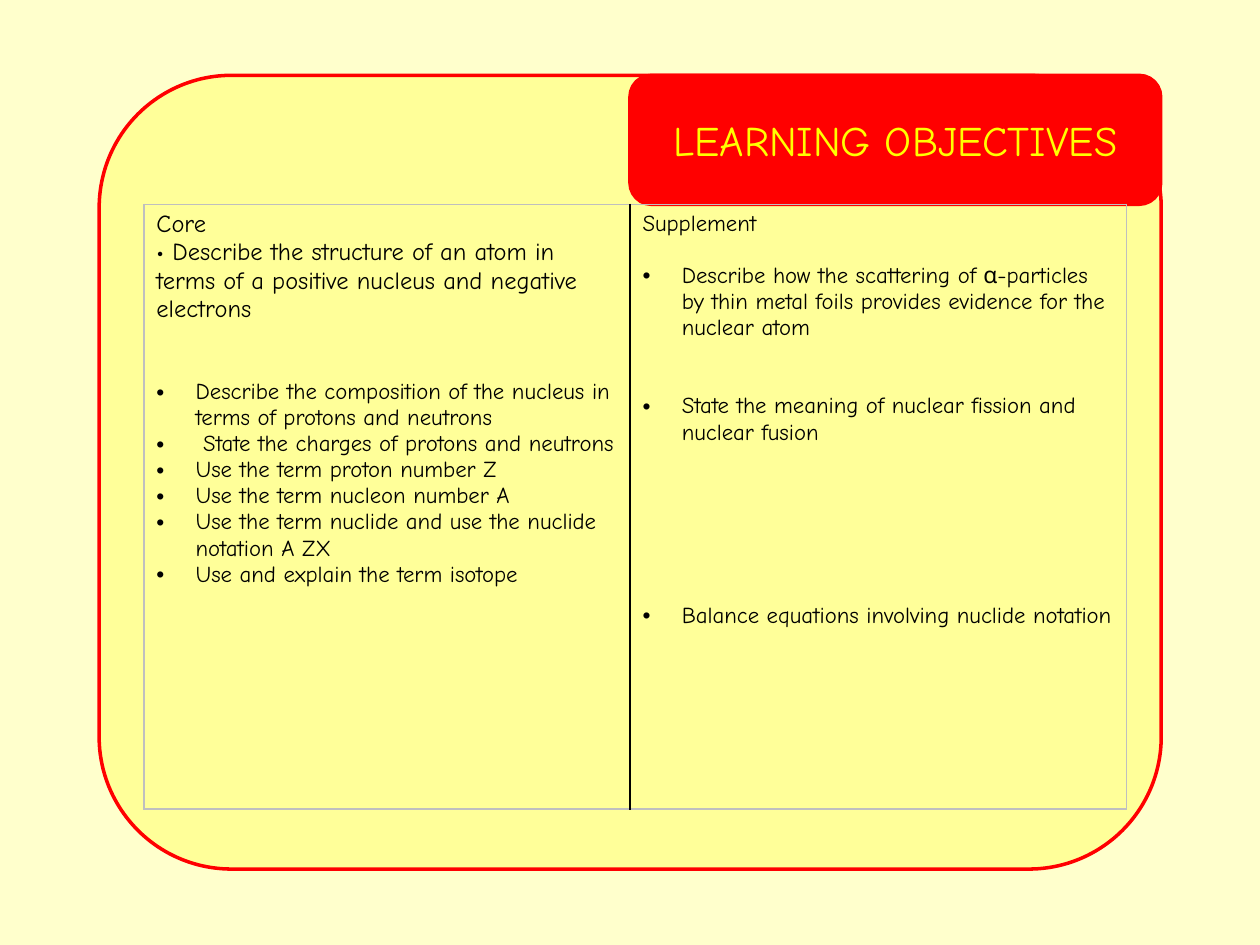
from lxml import etree
from pptx import Presentation
from pptx.dml.color import RGBColor
from pptx.enum.shapes import MSO_SHAPE
from pptx.enum.text import MSO_ANCHOR, PP_ALIGN
from pptx.oxml.ns import qn
from pptx.util import Cm, Pt

RECTANGLE = MSO_SHAPE.RECTANGLE
ROUNDED = MSO_SHAPE.ROUNDED_RECTANGLE
MIDDLE = MSO_ANCHOR.MIDDLE
LEFT, CENTER = PP_ALIGN.LEFT, PP_ALIGN.CENTER

FONT = "Comic Neue"
COLORS = {
    "backdrop": "FFFFCC",
    "panel": "FFFF99",
    "accent": "FF0000",
    "title": "FFFF00",
    "text": "000000",
    "frame": "BFBFBF",
}
BULLET_INDENT = Cm(0.79)

# Each entry: text, size, bulleted, space before in points
CORE = [
    ("Core", 14, False, 0),
    ("• Describe the structure of an atom in terms of a positive nucleus "
     "and negative electrons", 14, False, 0),
    ("Describe the composition of the nucleus in terms of protons and neutrons", 13, True, 32),
    (" State the charges of protons and neutrons", 13, True, 0),
    ("Use the term proton number Z", 13, True, 0),
    ("Use the term nucleon number A", 13, True, 0),
    ("Use the term nuclide and use the nuclide notation A ZX", 13, True, 0),
    ("Use and explain the term isotope", 13, True, 0),
]
SUPPLEMENT = [
    ("Supplement", 13, False, 0),
    ("Describe how the scattering of α-particles by thin metal foils "
     "provides evidence for the nuclear atom", 13, True, 15),
    ("State the meaning of nuclear fission and nuclear fusion", 13, True, 30),
    ("Balance equations involving nuclide notation", 13, True, 90),
]


def color(name):
    """Return the named colour."""
    return RGBColor.from_string(COLORS[name])


def add_panel(slide, kind, box, fill, line=None):
    """Add a filled shape, outlined when a line colour is named."""
    shape = slide.shapes.add_shape(kind, *map(Cm, box))
    shape.shadow.inherit = False
    shape.fill.solid()
    shape.fill.fore_color.rgb = color(fill)
    if line:
        shape.line.color.rgb = color(line)
        shape.line.width = Pt(2)
    else:
        shape.line.fill.background()
    return shape


def write(paragraph, text, size, font_color, alignment=LEFT):
    """Put styled text in a paragraph."""
    paragraph.text = text
    paragraph.alignment = alignment
    paragraph.font.name = FONT
    paragraph.font.size = Pt(size)
    paragraph.font.color.rgb = color(font_color)


def add_bullet(paragraph):
    """Give a paragraph a hanging bullet."""
    properties = paragraph._p.get_or_add_pPr()
    properties.set("marL", str(BULLET_INDENT))
    properties.set("indent", str(-BULLET_INDENT))
    etree.SubElement(properties, qn("a:buFont"), typeface="Arial")
    etree.SubElement(properties, qn("a:buChar"), char="•")


def set_borders(cell, sides):
    """Draw one-point borders in the colours named per side."""
    properties = cell._tc.get_or_add_tcPr()
    for position, (side, name) in enumerate(sides.items()):
        line = etree.Element(qn(f"a:ln{side}"), w=str(Pt(1)))
        fill = etree.SubElement(line, qn("a:solidFill"))
        etree.SubElement(fill, qn("a:srgbClr"), val=COLORS[name])
        properties.insert(position, line)


def fill_cell(cell, objectives, left, right):
    """Write a list of objectives in a bordered, unfilled cell."""
    cell.fill.background()
    set_borders(cell, {"L": left, "R": right, "T": "frame", "B": "frame"})
    frame = cell.text_frame
    for index, (text, size, bulleted, space) in enumerate(objectives):
        paragraph = frame.add_paragraph() if index else frame.paragraphs[0]
        if bulleted:
            add_bullet(paragraph)
        paragraph.space_before = Pt(space)
        write(paragraph, text, size, "text")


def add_objectives_table(slide):
    """Add the two-column table of objectives."""
    box = map(Cm, (2.9, 4.12, 19.81, 12.19))
    table = slide.shapes.add_table(1, 2, *box).table
    table.first_row = table.horz_banding = False
    for column, width in zip(table.columns, (9.8, 10.01)):
        column.width = Cm(width)
    fill_cell(table.cell(0, 0), CORE, "frame", "text")
    fill_cell(table.cell(0, 1), SUPPLEMENT, "text", "frame")


def main():
    """Build and save the slide."""
    presentation = Presentation()
    presentation.slide_width, presentation.slide_height = Cm(25.4), Cm(19.05)
    slide = presentation.slides.add_slide(presentation.slide_layouts[6])
    slide.background.fill.solid()
    slide.background.fill.fore_color.rgb = color("panel")
    add_panel(slide, RECTANGLE, (0, 0, 25.4, 19.05), "backdrop")
    add_panel(slide, ROUNDED, (2, 1.52, 21.41, 16), "panel", "accent")
    banner = add_panel(slide, ROUNDED, (12.7, 1.52, 10.7, 2.6), "accent", "accent")
    banner.text_frame.word_wrap = True
    banner.text_frame.vertical_anchor = MIDDLE
    write(banner.text_frame.paragraphs[0], "LEARNING OBJECTIVES", 24, "title", CENTER)
    add_objectives_table(slide)
    presentation.save("out.pptx")


if __name__ == "__main__":
    main()
